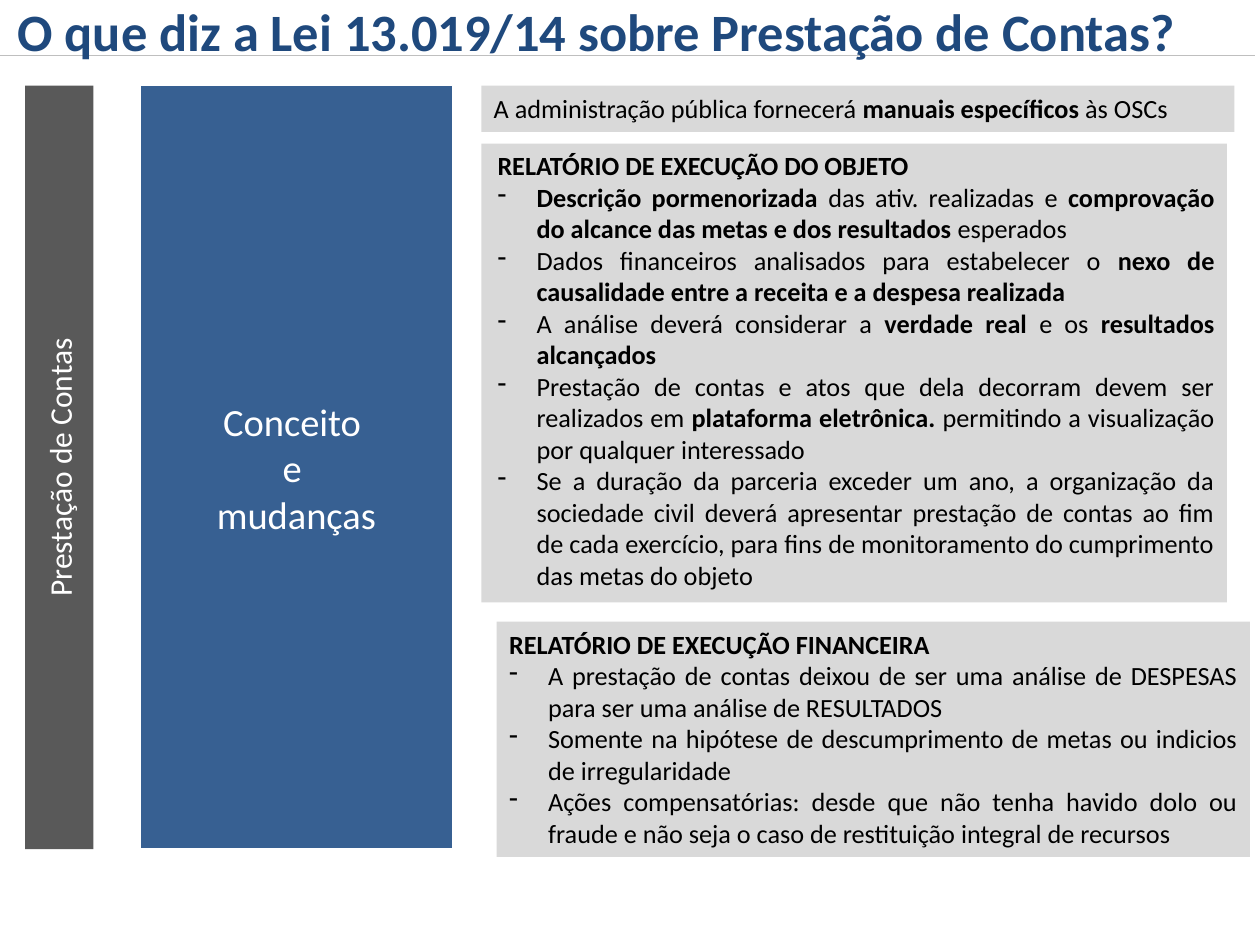
from dataclasses import dataclass

from lxml.etree import SubElement
from pptx import Presentation
from pptx.dml.color import RGBColor
from pptx.enum.shapes import MSO_CONNECTOR, MSO_SHAPE
from pptx.enum.text import MSO_ANCHOR, MSO_AUTO_SIZE, PP_ALIGN
from pptx.oxml.ns import qn
from pptx.util import Inches, Pt


@dataclass(frozen=True)
class Theme:
    font: str = "Calibri"
    white: str = "FFFFFF"
    ink: str = "000000"
    heading: str = "1F497D"
    rule: str = "BFBFBF"
    band: str = "595959"
    topic: str = "376092"
    panel: str = "D9D9D9"
    heading_size: int = 30
    topic_size: int = 22
    band_size: int = 18
    body_size: int = 15
    hairline: float = 0.75


@dataclass(frozen=True)
class Box:
    left: float
    top: float
    width: float
    height: float

    def share(self, x, y, width, height):
        return Box(self.left + x * self.width, self.top + y * self.height,
                   width * self.width, height * self.height)

    def emu(self):
        return [Inches(side) for side in (self.left, self.top, self.width, self.height)]


THEME = Theme()
PAGE = Box(0, 0, 10, 7.5)
INDENT = 0.31

MANUALS = ["A administração pública fornecerá *manuais específicos *às OSCs"]
OBJECT_REPORT = [
    "*RELATÓRIO DE EXECUÇÃO DO OBJETO",
    "*Descrição pormenorizada *das ativ. realizadas e *comprovação do alcance "
    "das metas e dos resultados *esperados",
    "Dados financeiros analisados para estabelecer o *nexo de causalidade entre "
    "a receita e a despesa realizada",
    "A análise deverá considerar a *verdade real *e os *resultados alcançados",
    "Prestação de contas e atos que dela decorram devem ser realizados em "
    "*plataforma eletrônica. *permitindo a visualização por qualquer interessado ",
    "Se a duração da parceria exceder um ano, a organização da sociedade civil "
    "deverá apresentar prestação de contas ao fim de cada exercício, para fins "
    "de monitoramento do cumprimento das metas do objeto",
]
FINANCE_REPORT = [
    "*RELATÓRIO DE EXECUÇÃO FINANCEIRA",
    "A prestação de contas deixou de ser uma análise de DESPESAS para ser uma "
    "análise de RESULTADOS",
    "Somente na hipótese de descumprimento de metas ou indicios de irregularidade",
    "Ações compensatórias: desde que não tenha havido dolo ou fraude e não seja "
    "o caso de restituição integral de recursos",
]


def style(run, size, color, bold=False):
    run.font.name = THEME.font
    run.font.size = Pt(size)
    run.font.bold = bold
    run.font.color.rgb = RGBColor.from_string(color)


def add_block(slide, box, fill):
    block = slide.shapes.add_shape(MSO_SHAPE.RECTANGLE, *box.emu())
    block.shadow.inherit = False
    block.fill.solid()
    block.fill.fore_color.rgb = RGBColor.from_string(fill)
    block.line.fill.background()
    block.text_frame.word_wrap = True
    block.text_frame.vertical_anchor = MSO_ANCHOR.MIDDLE
    return block


def add_label(slide, box, fill, text, size):
    label = add_block(slide, box, fill)
    label.text_frame.text = text
    for paragraph in label.text_frame.paragraphs:
        paragraph.alignment = PP_ALIGN.CENTER
        for run in paragraph.runs:
            style(run, size, THEME.white)
    return label


def add_heading(slide, box):
    rule_y = Inches(box.top + 0.82 * box.height)
    rule = slide.shapes.add_connector(
        MSO_CONNECTOR.STRAIGHT, Inches(box.left - 0.08), rule_y,
        Inches(box.left - 0.08 + PAGE.width), rule_y)
    rule.line.color.rgb = RGBColor.from_string(THEME.rule)
    rule.line.width = Pt(THEME.hairline)
    SubElement(rule._element.spPr, qn("a:effectLst"))

    heading = slide.shapes.add_textbox(*box.emu())
    frame = heading.text_frame
    frame.word_wrap = False
    frame.auto_size = MSO_AUTO_SIZE.SHAPE_TO_FIT_TEXT
    frame.text = "O que diz a Lei 13.019/14 sobre Prestação de Contas?"
    style(frame.paragraphs[0].runs[0], THEME.heading_size, THEME.heading, True)


def add_topic_columns(slide, box):
    band = add_label(slide, box.share(0, 0, 0.16, 1), THEME.band,
                     "Prestação de Contas", THEME.band_size)
    band.text_frame._txBody.bodyPr.set("vert", "vert270")
    topic = add_label(slide, box.share(0.27, 0, 0.73, 1), THEME.topic,
                      "Conceito \ne \nmudanças", THEME.topic_size)
    topic.line.color.rgb = RGBColor.from_string(THEME.white)
    topic.line.width = Pt(THEME.hairline)


def set_indent(paragraph, margin, hanging=0):
    properties = paragraph._p.get_or_add_pPr()
    properties.set("marL", str(Inches(margin)))
    if hanging:
        properties.set("indent", str(-Inches(hanging)))
        SubElement(properties, qn("a:buChar")).set("char", "-")


def add_panel(slide, box, lines, inset=0):
    frame = add_block(slide, box, THEME.panel).text_frame
    frame.vertical_anchor = MSO_ANCHOR.TOP
    frame.auto_size = MSO_AUTO_SIZE.SHAPE_TO_FIT_TEXT
    for index, line in enumerate(lines):
        paragraph = frame.add_paragraph() if index else frame.paragraphs[0]
        paragraph.alignment = PP_ALIGN.JUSTIFY
        if index:
            set_indent(paragraph, inset + INDENT, INDENT)
        else:
            set_indent(paragraph, inset)
        for order, words in enumerate(line.split("*")):
            if words:
                run = paragraph.add_run()
                run.text = words
                style(run, THEME.body_size, THEME.ink, order % 2 == 1)


def add_report_panels(slide, box):
    add_panel(slide, box.share(0, 0, 0.98, 0.06), MANUALS)
    add_panel(slide, box.share(0, 0.075, 0.97, 0.595), OBJECT_REPORT, 0.03)
    add_panel(slide, box.share(0.02, 0.695, 0.98, 0.305), FINANCE_REPORT)


def main():
    deck = Presentation()
    deck.slide_width = Inches(PAGE.width)
    deck.slide_height = Inches(PAGE.height)
    slide = deck.slides.add_slide(deck.slide_layouts[6])
    add_heading(slide, Box(0.04, -0.06, 9.48, 0.61))
    add_topic_columns(slide, Box(0.2, 0.68, 3.39, 6.06))
    add_report_panels(slide, Box(3.82, 0.68, 6.1, 6.12))
    deck.save("out.pptx")


if __name__ == "__main__":
    main()
